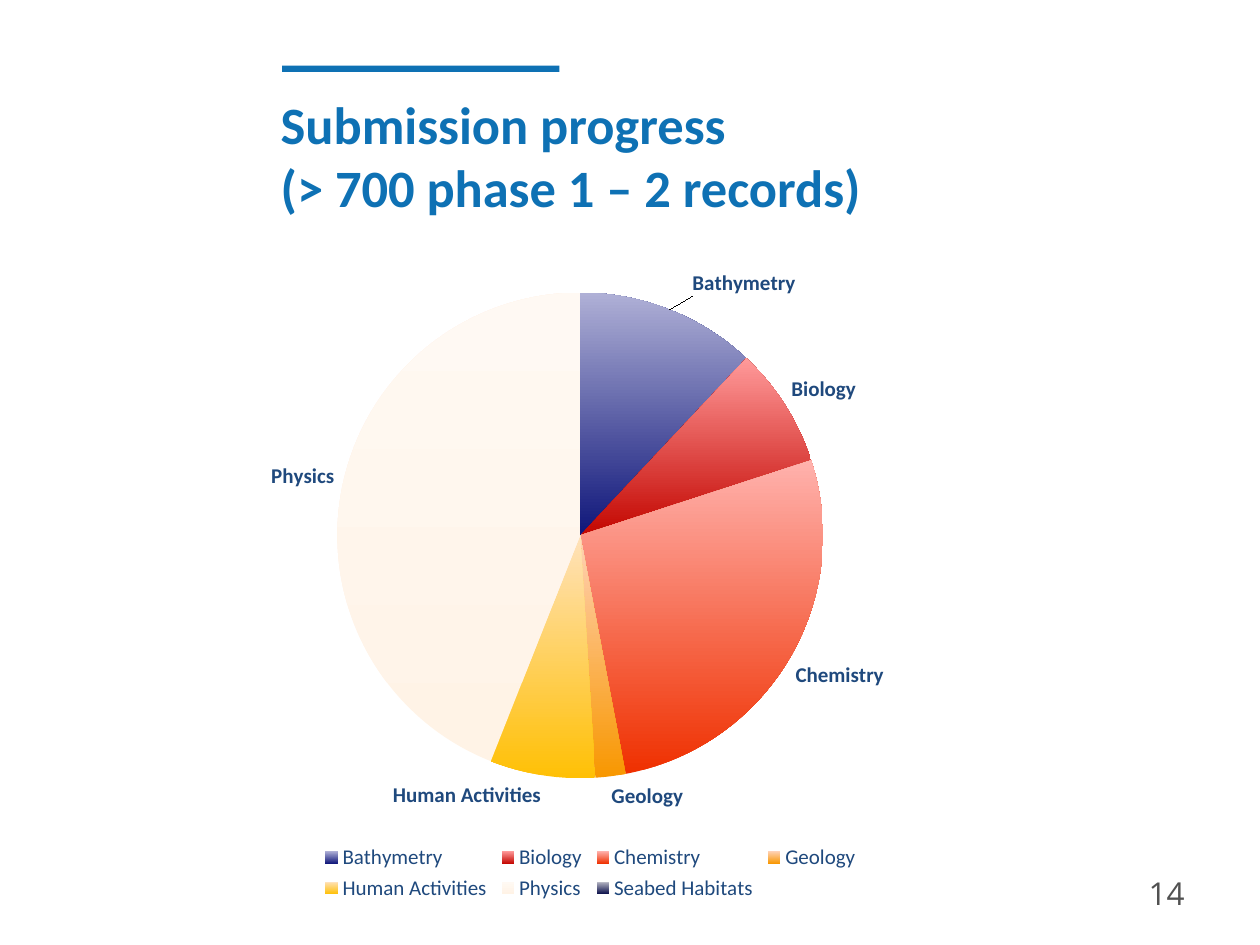
from lxml import etree
from pptx import Presentation
from pptx.chart.data import CategoryChartData
from pptx.dml.color import RGBColor
from pptx.enum.chart import XL_CHART_TYPE, XL_LABEL_POSITION, XL_LEGEND_POSITION
from pptx.enum.shapes import MSO_SHAPE
from pptx.enum.text import MSO_ANCHOR, PP_ALIGN
from pptx.oxml.ns import qn
from pptx.util import Inches, Pt

BLUE, NAVY, GREY = "0E71B4", "1F497D", "515151"

# Topic, value, gradient colours from bottom to top
SLICES = [
    ("Bathymetry", 12, "0F167A", "AFB0D6"),
    ("Biology", 8, "C30600", "FF9A9A"),
    ("Chemistry", 27, "EF3000", "FFB2AD"),
    ("Geology", 2, "F89700", "FFD2B7"),
    ("Human Activities", 7, "FFC005", "FFE2BB"),
    ("Physics", 44, "FFF3E6", "FFF9F3"),
    ("Seabed Habitats", 0, "090D49", "B8B9C5"),
]


def rgb(color):
    return RGBColor.from_string(color)


def set_font(font, size, color, bold=False, name="Calibri"):
    font.name, font.size, font.bold = name, Pt(size), bold
    font.color.rgb = rgb(color)


def add_bar(s, x, y, w, h, color):
    sp = s.shapes.add_shape(MSO_SHAPE.RECTANGLE, Inches(x), Inches(y), Inches(w), Inches(h))
    sp.shadow.inherit = False
    sp.fill.solid()
    sp.fill.fore_color.rgb = rgb(color)
    sp.line.fill.background()


def add_text(s, text, x, y, w, h, align=PP_ALIGN.LEFT, anchor=MSO_ANCHOR.TOP, **font):
    tf = s.shapes.add_textbox(Inches(x), Inches(y), Inches(w), Inches(h)).text_frame
    tf.word_wrap = True
    tf.vertical_anchor = anchor
    p = tf.paragraphs[0]
    p.alignment = align
    for i, line in enumerate(text.split("\n")):
        if i:
            p.add_line_break()
        r = p.add_run()
        r.text = line
        set_font(r.font, **font)


def make_layout(**values):
    """Return a manual chart layout, in fractions of the chart."""
    layout = etree.Element(qn("c:layout"))
    manual = etree.SubElement(layout, qn("c:manualLayout"))
    for tag, value in values.items():
        etree.SubElement(manual, qn(f"c:{tag}")).set("val", str(value))
    return layout


def place(parent, layout, after=None):
    """Put a layout into a chart element, in place of any older one."""
    for old in parent.findall(qn("c:layout")):
        parent.remove(old)
    if after is None:
        parent.insert(0, layout)
    else:
        parent.find(qn(after)).addnext(layout)


def add_pie(s, x, y, w, h):
    data = CategoryChartData()
    data.categories = [name for name, *_ in SLICES]
    data.add_series("Series 1", [value for _, value, *_ in SLICES])
    chart = s.shapes.add_chart(
        XL_CHART_TYPE.PIE, Inches(x), Inches(y), Inches(w), Inches(h), data).chart
    chart.has_title = False
    set_font(chart.font, 10, GREY)
    plot = chart.plots[0]
    plot.vary_by_categories = True
    series = plot.series[0]

    # Slices
    for i, (_, _, *colors) in enumerate(SLICES):
        fill = series.points[i].format.fill
        fill.gradient()
        fill.gradient_angle = 90
        for stop, color in zip(fill.gradient_stops, colors):
            stop.color.rgb = rgb(color)

    # Category labels, the first one moved off its slice
    labels = series.data_labels
    labels.show_category_name = True
    labels.show_value = labels.show_percentage = False
    first = series.points[0].data_label
    for label in (labels, first):
        set_font(label.font, 12, NAVY, bold=True)
        label.position = XL_LABEL_POSITION.OUTSIDE_END
    dLbl = next(chart.element.iter(qn("c:dLbl")))
    for tag, value in (("c:showVal", "0"), ("c:showCatName", "1"), ("c:showPercent", "0")):
        dLbl.find(qn(tag)).set("val", value)
    place(dLbl, make_layout(x=0.02, y=-0.01), after="c:idx")

    # Legend
    chart.has_legend = True
    legend = chart.legend
    legend.position = XL_LEGEND_POSITION.BOTTOM
    legend.include_in_layout = False
    set_font(legend.font, 12, NAVY)

    # Places of pie and legend
    edges = dict(xMode="edge", yMode="edge")
    place(next(chart.element.iter(qn("c:plotArea"))),
          make_layout(layoutTarget="inner", **edges, x=0.25, y=0.07, w=0.48, h=0.74))
    place(next(chart.element.iter(qn("c:legend"))),
          make_layout(**edges, x=0.23, y=0.9, w=0.54, h=0.1), after="c:legendPos")


def main():
    prs = Presentation()
    prs.slide_width, prs.slide_height = Inches(10), Inches(7.5)
    s = prs.slides.add_slide(prs.slide_layouts[6])

    # Heading
    add_bar(s, 2.24, 0.52, 2.2, 0.05, BLUE)
    add_text(s, "Submission progress\n(> 700 phase 1 – 2 records)", 2.13, 0.68, 7.04, 0.63,
             size=30, color=BLUE, bold=True)

    # Chart
    add_pie(s, 0.67, 1.94, 8.03, 5.25)

    # Page number
    add_text(s, "14", 7.17, 6.89, 2.33, 0.4, align=PP_ALIGN.RIGHT, anchor=MSO_ANCHOR.MIDDLE,
             size=18, color=GREY, name="Open Sans")
    prs.save("out.pptx")


if __name__ == "__main__":
    main()
